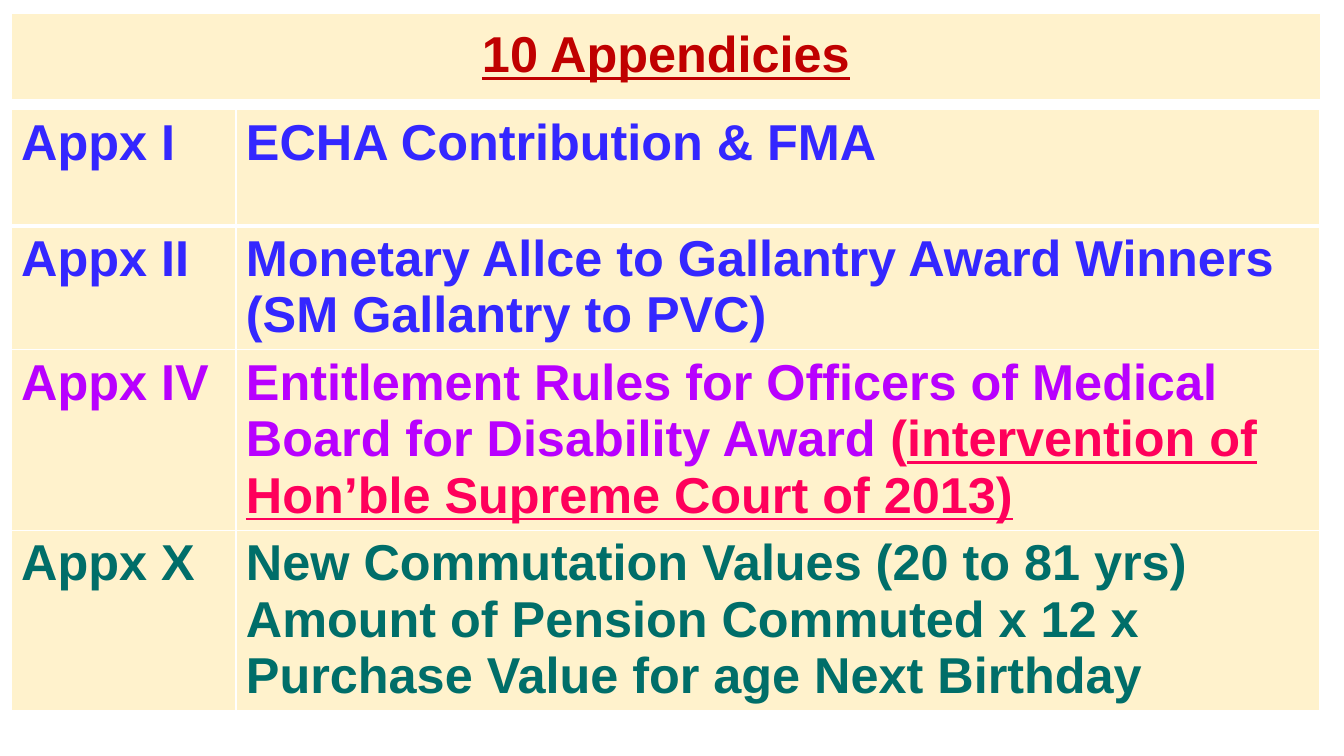
from lxml import etree
from pptx import Presentation, util as u
from pptx.dml.color import RGBColor
from pptx.enum import text
from pptx.oxml import ns

CREAM, WHITE = "FFF2CC", "FFFFFF"
RED, BLUE, PURPLE, PINK, GREEN = "C00000", "3427FF", "B800FF", "FF005B", "006E69"

# Each row: label, label colour, paragraphs made of (wording, colour, underline)
APPENDICES = [
    ("Appx I", BLUE, [[("ECHA Contribution & FMA", BLUE, False)]]),
    ("Appx II", BLUE, [[("Monetary Allce to Gallantry Award Winners "
                         "(SM Gallantry to PVC)", BLUE, False)]]),
    ("Appx IV", PURPLE, [[
        ("Entitlement Rules for Officers of Medical Board for Disability Award ", PURPLE, False),
        ("(", PINK, False),
        ("intervention of Hon’ble Supreme Court of 2013)", PINK, True)]]),
    ("Appx X", GREEN, [
        [("New Commutation Values (20 to 81 yrs)", GREEN, False)],
        [("Amount of Pension Commuted x 12 x Purchase Value for age Next Birthday",
          GREEN, False)]]),
]
COLUMN_WIDTHS = [2.23, 10.75]
ROW_HEIGHTS = [1.15, 1.23, 1.79, 1.79]


def colour(code):
    return RGBColor.from_string(code)


class AppendixSlide:
    font_format = {"name": "Arial", "size": u.Pt(36), "bold": True}

    def __init__(self, presentation):
        self.slide = presentation.slides.add_slide(presentation.slide_layouts[5])

    def fill(self, target, code):
        target.fill.solid()
        target.fill.fore_color.rgb = colour(code)

    def add_wording(self, frame, paragraphs):
        for index, pieces in enumerate(paragraphs):
            paragraph = frame.paragraphs[0] if index == 0 else frame.add_paragraph()
            for wording, code, underline in pieces:
                run = paragraph.add_run()
                run.text = wording
                for key, value in {**self.font_format, "underline": underline}.items():
                    setattr(run.font, key, value)
                run.font.color.rgb = colour(code)

    def title(self, wording, code, left, top, width, height):
        heading = self.slide.shapes.title
        place = {"left": left, "top": top, "width": width, "height": height}
        for key, value in place.items():
            setattr(heading, key, u.Inches(value))
        self.fill(heading, CREAM)
        frame = heading.text_frame
        frame_format = {"word_wrap": True, "auto_size": text.MSO_AUTO_SIZE.NONE,
                        "vertical_anchor": text.MSO_ANCHOR.MIDDLE}
        for key, value in frame_format.items():
            setattr(frame, key, value)
        self.add_wording(frame, [[(wording, code, True)]])
        frame.paragraphs[0].alignment = text.PP_ALIGN.CENTER
        frame.paragraphs[0].line_spacing = 0.9

    def borders(self, cell, bottom, top):
        properties = cell._tc.get_or_add_tcPr()
        widths = {"a:lnL": 1, "a:lnR": 1, "a:lnT": top, "a:lnB": bottom}
        for index, (side, width) in enumerate(widths.items()):
            line = etree.Element(ns.qn(side), w=str(u.Pt(width)))
            solid = etree.SubElement(line, ns.qn("a:solidFill"))
            etree.SubElement(solid, ns.qn("a:srgbClr"), val=WHITE)
            properties.insert(index, line)

    def table(self, rows, left, top):
        grid = self.slide.shapes.add_table(
            len(rows), len(COLUMN_WIDTHS), u.Inches(left), u.Inches(top),
            u.Inches(sum(COLUMN_WIDTHS)), u.Inches(sum(ROW_HEIGHTS))).table
        grid.horz_banding = False
        for column, width in zip(grid.columns, COLUMN_WIDTHS):
            column.width = u.Inches(width)
        for index, (label, code, description) in enumerate(rows):
            grid.rows[index].height = u.Inches(ROW_HEIGHTS[index])
            contents = [[[(label, code, False)]], description]
            for position, paragraphs in enumerate(contents):
                cell = grid.cell(index, position)
                self.fill(cell, CREAM)
                self.borders(cell, bottom=3 if index == 0 else 1,
                             top=3 if index == 1 else 1)
                self.add_wording(cell.text_frame, paragraphs)


def main():
    presentation = Presentation()
    presentation.slide_width = u.Inches(13.33)
    presentation.slide_height = u.Inches(7.5)
    page = AppendixSlide(presentation)

    # Heading band
    page.title("10 Appendicies", RED, 0.12, 0.14, 12.97, 0.84)

    # List of appendices
    page.table(APPENDICES, 0.11, 1.09)

    presentation.save("out.pptx")


if __name__ == "__main__":
    main()
